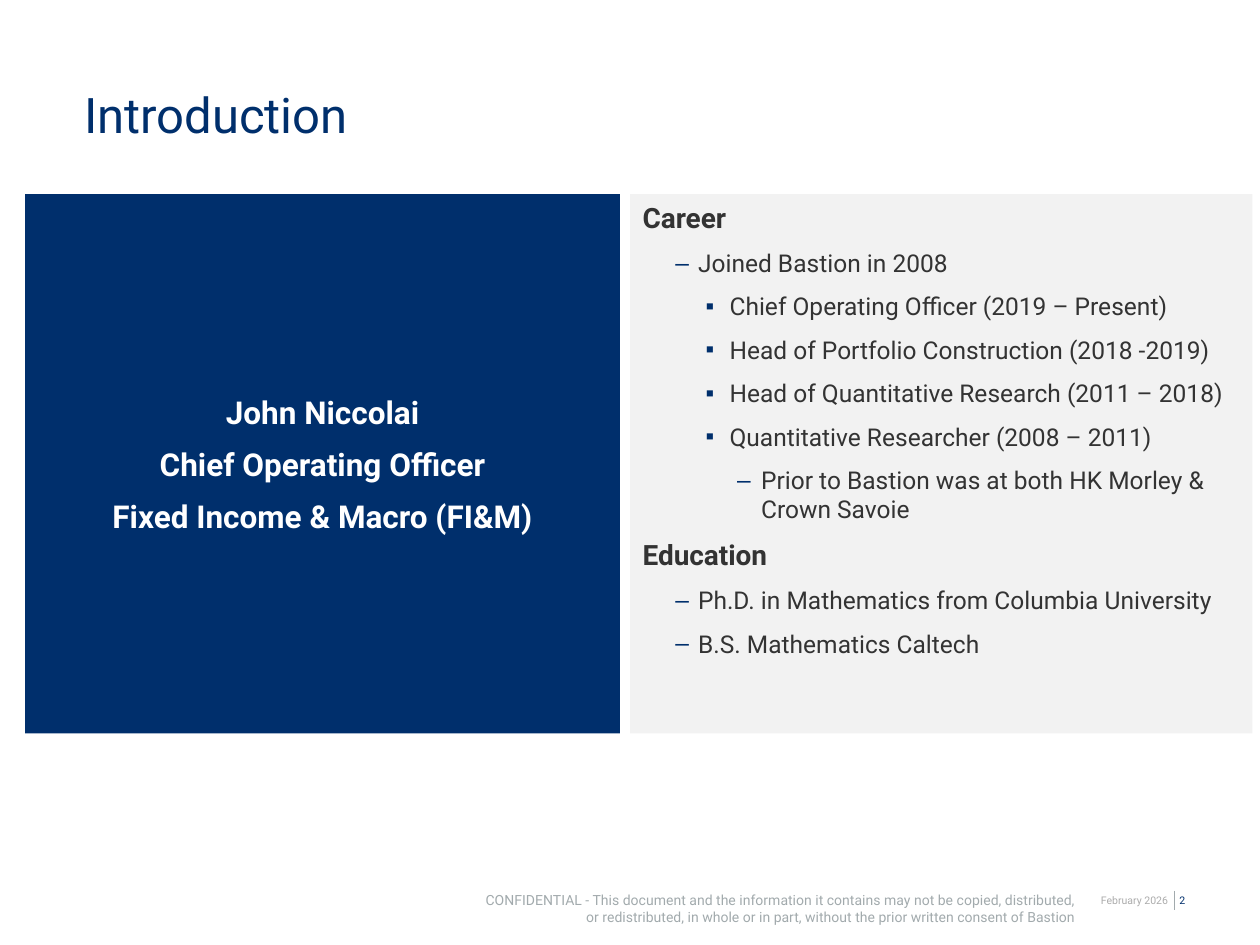
from lxml.etree import SubElement
from pptx import Presentation
from pptx.dml.color import RGBColor
from pptx.enum.shapes import MSO_CONNECTOR
from pptx.enum.text import MSO_ANCHOR, MSO_AUTO_SIZE, PP_ALIGN
from pptx.oxml.ns import qn
from pptx.util import Inches, Pt

COLORS = {"navy": "002F6C", "panel": "F2F2F2", "ink": "333333",
          "white": "FFFFFF", "footer": "A2AAAD", "date": "ACACAC"}
BULLETS = {1: ("–", 0.44, 0.18), 2: ("▪", 0.69, 0.19), 3: ("–", 0.94, 0.19)}
NAME = ["John Niccolai", "Chief Operating Officer", "Fixed Income & Macro (FI&M)"]
BIOGRAPHY = [
    (0, "Career"),
    (1, "Joined Bastion in 2008"),
    (2, "Chief Operating Officer (2019 – Present)"),
    (2, "Head of Portfolio Construction (2018 -2019)"),
    (2, "Head of Quantitative Research (2011 – 2018)"),
    (2, "Quantitative Researcher (2008 – 2011)"),
    (3, "Prior to Bastion was at both HK Morley & Crown Savoie"),
    (0, "Education"),
    (1, "Ph.D. in Mathematics from Columbia University"),
    (1, "B.S. Mathematics Caltech"),
]
CONFIDENTIAL = ("CONFIDENTIAL - This document and the information it contains may not be "
                "copied, distributed, or redistributed, in whole or in part, without the "
                "prior written consent of Bastion")


def color(name):
    return RGBColor.from_string(COLORS[name])


def set_bullet(para, level):
    properties = para._p.get_or_add_pPr()
    symbol, left, hanging = BULLETS.get(level, (None, 0, 0))
    properties.set("marL", str(Inches(left)))
    properties.set("indent", str(-Inches(hanging)))
    if symbol is None:
        SubElement(properties, qn("a:buNone"))
        return
    tint = SubElement(properties, qn("a:buClr"))
    SubElement(tint, qn("a:srgbClr"), val=COLORS["navy"])
    SubElement(properties, qn("a:buFont"), typeface="Arial")
    SubElement(properties, qn("a:buChar"), char=symbol)


def write(frame, text, size=14, tint="ink", bold=False, align=PP_ALIGN.LEFT,
          level=0, gap=0, leading=None, first=True):
    para = frame.paragraphs[0] if first else frame.add_paragraph()
    para.level, para.alignment = level, align
    para.space_before, para.space_after = Pt(0 if first else gap), Pt(gap)
    if leading:
        para.line_spacing = Pt(leading)
    set_bullet(para, level)
    span = para.add_run()
    span.text = text
    span.font.name, span.font.size, span.font.bold = "Roboto", Pt(size), bold
    span.font.color.rgb = color(tint)


class SlideBuilder:
    """Places styled elements on one slide with a grid of 100 columns and 75 rows."""

    def __init__(self, deck):
        self.column, self.row = deck.slide_width / 100, deck.slide_height / 75
        self.page = deck.slides.add_slide(deck.slide_layouts[3])

    def place(self, box, column, row, columns, rows, anchor, insets=(0, 0)):
        box.left, box.top = round(column * self.column), round(row * self.row)
        box.width, box.height = round(columns * self.column), round(rows * self.row)
        frame = box.text_frame
        frame.word_wrap, frame.auto_size = True, MSO_AUTO_SIZE.NONE
        frame.vertical_anchor = anchor
        frame.margin_left = frame.margin_right = Inches(insets[0])
        frame.margin_top = frame.margin_bottom = Inches(insets[1])
        return frame

    def title(self, text, *area):
        frame = self.place(self.page.shapes.title, *area, MSO_ANCHOR.TOP)
        write(frame, text, size=28, tint="navy")

    def panel(self, index, fill, *area, anchor, insets=(0, 0)):
        box = self.page.placeholders[index]
        box.fill.solid()
        box.fill.fore_color.rgb = color(fill)
        return self.place(box, *area, anchor, insets)

    def label(self, text, *area, **style):
        box = self.page.shapes.add_textbox(0, 0, 0, 0)
        write(self.place(box, *area, MSO_ANCHOR.MIDDLE), text, **style)

    def divider(self, column, top, bottom):
        x = round(column * self.column)
        line = self.page.shapes.add_connector(
            MSO_CONNECTOR.STRAIGHT, x, round(top * self.row), x, round(bottom * self.row))
        line.line.color.rgb, line.line.width = color("footer"), Pt(0.25)
        SubElement(line._element.spPr, qn("a:effectLst"))


def main():
    deck = Presentation()
    deck.slide_width, deck.slide_height = Inches(10), Inches(7.5)
    slide = SlideBuilder(deck)
    slide.title("Introduction", 6.7, 6.7, 54.4, 5)

    frame = slide.panel(1, "navy", 2, 15.4, 47.2, 42.8, anchor=MSO_ANCHOR.MIDDLE)
    for number, text in enumerate(NAME):
        write(frame, text, size=18, tint="white", bold=True, align=PP_ALIGN.CENTER,
              gap=4, first=number == 0)

    frame = slide.panel(2, "panel", 50, 15.4, 49.4, 42.8,
                        anchor=MSO_ANCHOR.TOP, insets=(0.1, 0.05))
    for number, (level, text) in enumerate(BIOGRAPHY):
        write(frame, text, size=14 if level else 16, bold=level == 0, level=level,
              gap=4, first=number == 0)

    slide.label(CONFIDENTIAL, 38.2, 70.7, 47.2, 2.7, size=8, tint="footer",
                align=PP_ALIGN.RIGHT, leading=10)
    slide.label("February 2026", 82.7, 70.7, 10, 1.5, size=6, tint="date",
                align=PP_ALIGN.RIGHT)
    slide.divider(93.2, 70.7, 72.2)
    slide.label("2", 93.6, 70.7, 1.3, 1.5, size=6, tint="navy")
    deck.save("out.pptx")


if __name__ == "__main__":
    main()
